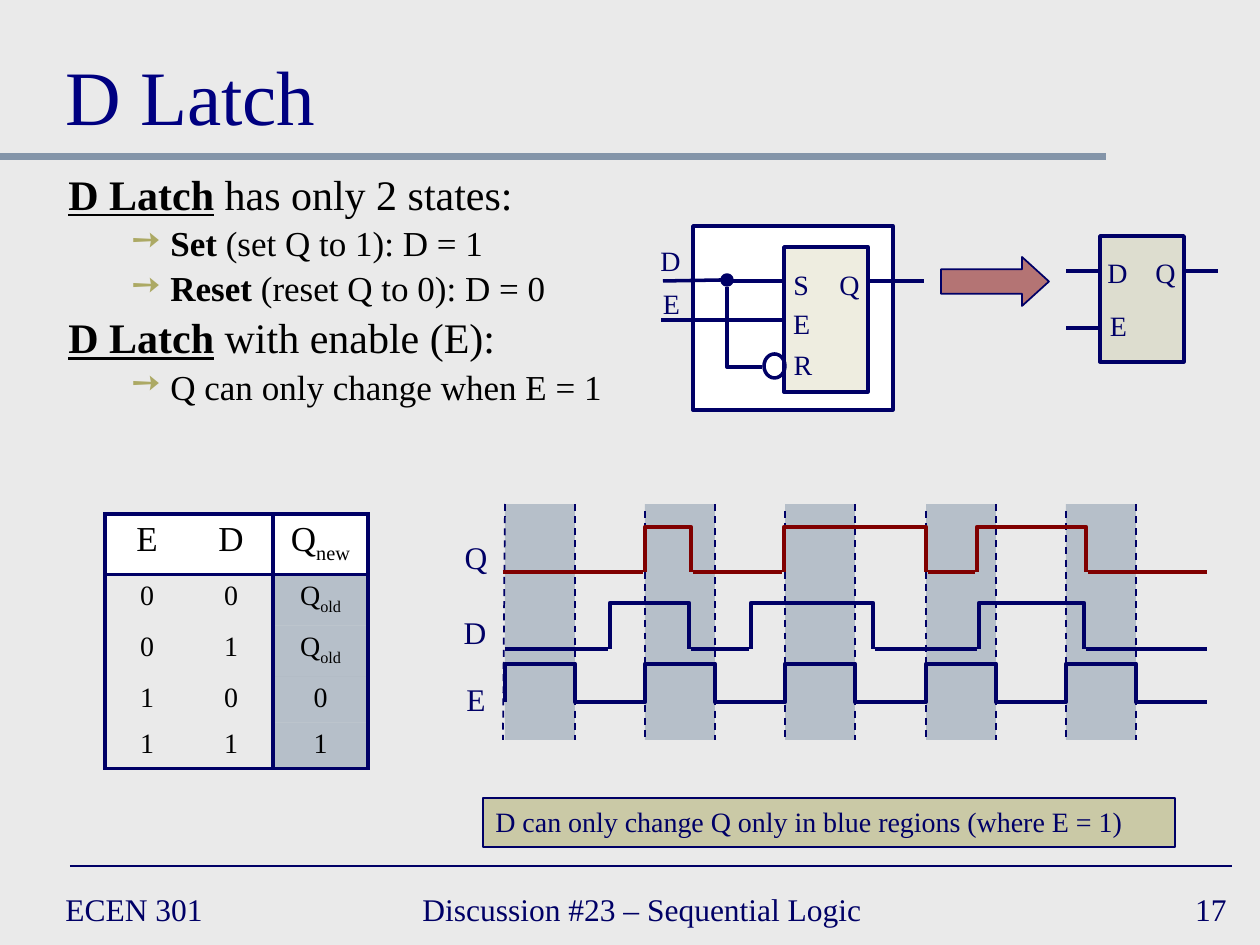
"""Build the D Latch slide with its truth table, latch symbols and timing diagram."""
import pptx
import pptx.dml.color
import pptx.enum.dml
import pptx.enum.shapes
import pptx.enum.text
import pptx.oxml.ns
import pptx.util
from lxml import etree

PX = 914400 / 126
FONT = "Times New Roman"
RGBColor = pptx.dml.color.RGBColor
NAVY = RGBColor(0x00, 0x00, 0x66)
TITLE_BLUE = RGBColor(0x00, 0x00, 0x80)
STEEL = RGBColor(0x84, 0x95, 0xA9)
OLIVE = RGBColor(0xAB, 0xA9, 0x64)
MAROON = RGBColor(0x80, 0x00, 0x00)
BLACK = RGBColor(0, 0, 0)
WHITE = RGBColor(0xFF, 0xFF, 0xFF)
BACKGROUND = RGBColor(0xEA, 0xEA, 0xEA)
SHAPE = pptx.enum.shapes.MSO_SHAPE
CONNECTOR = pptx.enum.shapes.MSO_CONNECTOR
ALIGN = pptx.enum.text.PP_ALIGN
ANCHOR = pptx.enum.text.MSO_ANCHOR
qn = pptx.oxml.ns.qn

presentation = pptx.Presentation()
presentation.slide_width = round(1260 * PX)
presentation.slide_height = round(945 * PX)
slide = presentation.slides.add_slide(presentation.slide_layouts[5])
slide.background.fill.solid()
slide.background.fill.fore_color.rgb = BACKGROUND
translucent = []


def add_label(text, left, top, width, height, size, alignment=ALIGN.CENTER, wrap=False):
    box = slide.shapes.add_textbox(*(round(n * PX) for n in (left, top, width, height)))
    box.text_frame.word_wrap = wrap
    paragraph = box.text_frame.paragraphs[0]
    paragraph.alignment = alignment
    run = paragraph.add_run()
    run.text = text
    run.font.name = FONT
    run.font.size = pptx.util.Pt(size)
    run.font.color.rgb = NAVY
    return box


def add_line(x1, y1, x2, y2, color=NAVY, width=2, kind=CONNECTOR.STRAIGHT):
    line = slide.shapes.add_connector(kind, *(round(n * PX) for n in (x1, y1, x2, y2)))
    line.line.color.rgb = color
    line.line.width = pptx.util.Pt(width)
    etree.SubElement(line.element.spPr, qn("a:effectLst"))
    return line


add_line(0, 157, 1106, 157, STEEL, 4)
add_line(70, 866, 1232, 866, NAVY, 1)
for text, left, width, alignment in (
    ("ECEN 301", 53, 273, ALIGN.LEFT),
    ("Discussion #23 – Sequential Logic", 410, 483, ALIGN.LEFT),
    ("17", 977, 262, ALIGN.RIGHT),
):
    footer = add_label(text, left, 882, width, 53, 18, alignment, True)
    footer.text_frame.vertical_anchor = ANCHOR.MIDDLE

title = slide.shapes.title
title.left, title.top, title.width, title.height = (round(n * PX) for n in (53, 21, 1155, 126))
title.text_frame.auto_size = pptx.enum.text.MSO_AUTO_SIZE.NONE
title.text_frame.vertical_anchor = ANCHOR.BOTTOM
title.text_frame.paragraphs[0].alignment = ALIGN.LEFT
run = title.text_frame.paragraphs[0].add_run()
run.text = "D Latch"
run.font.name = FONT
run.font.size = pptx.util.Pt(44)
run.font.color.rgb = TITLE_BLUE

body = slide.shapes.add_textbox(*(round(n * PX) for n in (56, 168, 1120, 267)))
body.text_frame.word_wrap = True
for index, (level, strong, plain) in enumerate((
    (0, "D Latch", " has only 2 states:"),
    (1, "Set", " (set Q to 1): D = 1"),
    (1, "Reset", " (reset Q to 0): D = 0"),
    (0, "D Latch", " with enable (E):"),
    (1, "", "Q can only change when E = 1"),
)):
    paragraph = body.text_frame.add_paragraph() if index else body.text_frame.paragraphs[0]
    paragraph.level = level
    size = 20 if level else 24
    properties = paragraph._p.get_or_add_pPr()
    margin, indent = (102, -39) if level else (48, -48)
    properties.set("marL", str(round(margin * PX)))
    properties.set("indent", str(round(indent * PX)))
    paragraph.line_spacing = 0.9
    paragraph.space_before = pptx.util.Pt(size * 0.2 if index else 0)
    if level:
        bullet_color = etree.SubElement(properties, qn("a:buClr"))
        etree.SubElement(bullet_color, qn("a:srgbClr"), val="ACA964")
        etree.SubElement(properties, qn("a:buChar"), char="➙")
    for text, bold in ((strong, True), (plain, False)):
        if text:
            run = paragraph.add_run()
            run.text = text
            run.font.name = FONT
            run.font.size = pptx.util.Pt(size)
            run.font.color.rgb = BLACK
            run.font.bold = bold
            run.font.underline = bold and level == 0

truth_rows = (
    ("E", "D", "Q new"), ("0", "0", "Q old"), ("0", "1", "Q old"), ("1", "0", "0"), ("1", "1", "1"),
)
frame = slide.shapes.add_table(5, 3, *(round(n * PX) for n in (105, 514, 263, 244)))
table = frame.table
table.first_row = table.horz_banding = False
for column, width in zip(table.columns, (84, 84, 95)):
    column.width = round(width * PX)
for row, height in zip(table.rows, (57, 48, 48, 46, 45)):
    row.height = round(height * PX)
for row_index, values in enumerate(truth_rows):
    for column_index, value in enumerate(values):
        cell = table.cell(row_index, column_index)
        properties = cell._tc.get_or_add_tcPr()
        edges = {
            "a:lnL": column_index in (0, 2), "a:lnR": column_index in (1, 2),
            "a:lnT": row_index in (0, 1), "a:lnB": row_index in (0, 4),
        }
        for edge, visible in edges.items():
            border = etree.SubElement(properties, qn(edge), w=str(pptx.util.Pt(2.25)))
            paint = etree.SubElement(border, qn("a:solidFill" if visible else "a:noFill"))
            if visible:
                etree.SubElement(paint, qn("a:srgbClr"), val=str(NAVY))
        if row_index == 0 or column_index == 2:
            cell.fill.solid()
            cell.fill.fore_color.rgb = STEEL if row_index else WHITE
            if row_index:
                translucent.append((properties, 50))
        else:
            cell.fill.background()
        paragraph = cell.text_frame.paragraphs[0]
        paragraph.alignment = ALIGN.CENTER
        for part_index, part in enumerate(value.split()):
            run = paragraph.add_run()
            run.text = part
            run.font.name = FONT
            run.font.size = pptx.util.Pt(16 if row_index else 20)
            run.font.color.rgb = BLACK
            if part_index:
                run._r.get_or_add_rPr().set("baseline", "-25000")

stripe_lefts = [505 + 702 * index // 5 for index in range(5)]
stripes = [(SHAPE.RECTANGLE, left, 504, 70, 236, STEEL, 50, 0) for left in stripe_lefts]
for kind, left, top, width, height, color, opacity, line_width in [
    (SHAPE.RIGHT_ARROW, 941, 257, 108, 49, MAROON, 50, 1),
    (SHAPE.RECTANGLE, 1100, 236, 84, 126, OLIVE, 20, 2),
    (SHAPE.RECTANGLE, 693, 226, 200, 184, WHITE, 100, 2),
    (SHAPE.RECTANGLE, 784, 247, 84, 145, OLIVE, 20, 2),
    (SHAPE.OVAL, 764, 354, 21, 24, None, 100, 2),
    (SHAPE.OVAL, 722, 275, 10, 10, NAVY, 100, 2),
] + stripes:
    shape = slide.shapes.add_shape(kind, *(round(n * PX) for n in (left, top, width, height)))
    shape.shadow.inherit = False
    if color is None:
        shape.fill.background()
    else:
        shape.fill.solid()
        shape.fill.fore_color.rgb = color
    if opacity < 100:
        translucent.append((shape.element.spPr, opacity))
    if line_width:
        shape.line.color.rgb = NAVY
        shape.line.width = pptx.util.Pt(line_width)
    else:
        shape.line.fill.background()
    if kind == SHAPE.RIGHT_ARROW:
        shape.adjustments[1] = 0.55

for wire in (
    (1100, 271, 1066, 271), (1100, 328, 1066, 328), (1218, 271, 1184, 271),
    (784, 281, 732, 281), (924, 281, 868, 281), (782, 320, 661, 320), (721, 280, 663, 281),
):
    add_line(*wire)
elbow = add_line(762, 367, 727, 287, kind=CONNECTOR.ELBOW)
elbow.element.spPr.find(qn("a:prstGeom")).set("prst", "bentConnector2")

for text, left, top, width, size in (
    ("D", 1095, 249, 45, 16), ("Q", 1143, 249, 45, 16), ("E", 1097, 302, 43, 16),
    ("S", 781, 261, 40, 16), ("Q", 827, 261, 45, 16), ("R", 781, 341, 44, 16),
    ("E", 780, 300, 43, 16), ("D", 648, 237, 45, 16), ("E", 650, 280, 43, 16),
    ("Q", 452, 532, 48, 18), ("D", 451, 607, 48, 18), ("E", 454, 674, 44, 18),
):
    add_label(text, left, top, width, 47 if size == 16 else 50, size)

for left in stripe_lefts:
    rise = (505, 504, 503, 740) if left == 505 else (left, 511, left, 740)
    for ends in (rise, (left + 70, 504, left + 70, 740)):
        add_line(*ends, width=1).line.dash_style = pptx.enum.dml.MSO_LINE.DASH

clock = [(x, y) for left in stripe_lefts
         for x, y in ((left, 702), (left, 664), (left + 70, 664), (left + 70, 702))]
waves = [(clock + [(1207, 702)], NAVY)]
for color, low, high, start, pulses in (
    (NAVY, 649, 603, 505, ((610, 689), (751, 873), (979, 1084))),
    (MAROON, 572, 527, 503, ((645, 691), (784, 926), (977, 1086))),
):
    for rise, fall in pulses:
        waves.append(([(rise, low), (rise, high), (fall, high), (fall, low)], color))
        add_line(start, low, rise - 2, low, color)
        start = fall + 2
    add_line(start, low, 1207, low, color)
for points, color in waves:
    builder = slide.shapes.build_freeform(*points[0], scale=PX)
    builder.add_line_segments(points[1:], close=False)
    wave = builder.convert_to_shape()
    wave.shadow.inherit = False
    wave.fill.background()
    wave.line.color.rgb = color
    wave.line.width = pptx.util.Pt(2.5)

note = add_label("D can only change Q only in blue regions (where E = 1)",
                 483, 798, 692, 49, 16, ALIGN.LEFT, True)
note.fill.solid()
note.fill.fore_color.rgb = OLIVE
note.line.color.rgb = NAVY
note.line.width = pptx.util.Pt(1.5)
translucent.append((note.element.spPr, 50))

for properties, opacity in translucent:
    color_element = properties.find(qn("a:solidFill")).find(qn("a:srgbClr"))
    etree.SubElement(color_element, qn("a:alpha"), val=str(opacity * 1000))

presentation.save("out.pptx")
